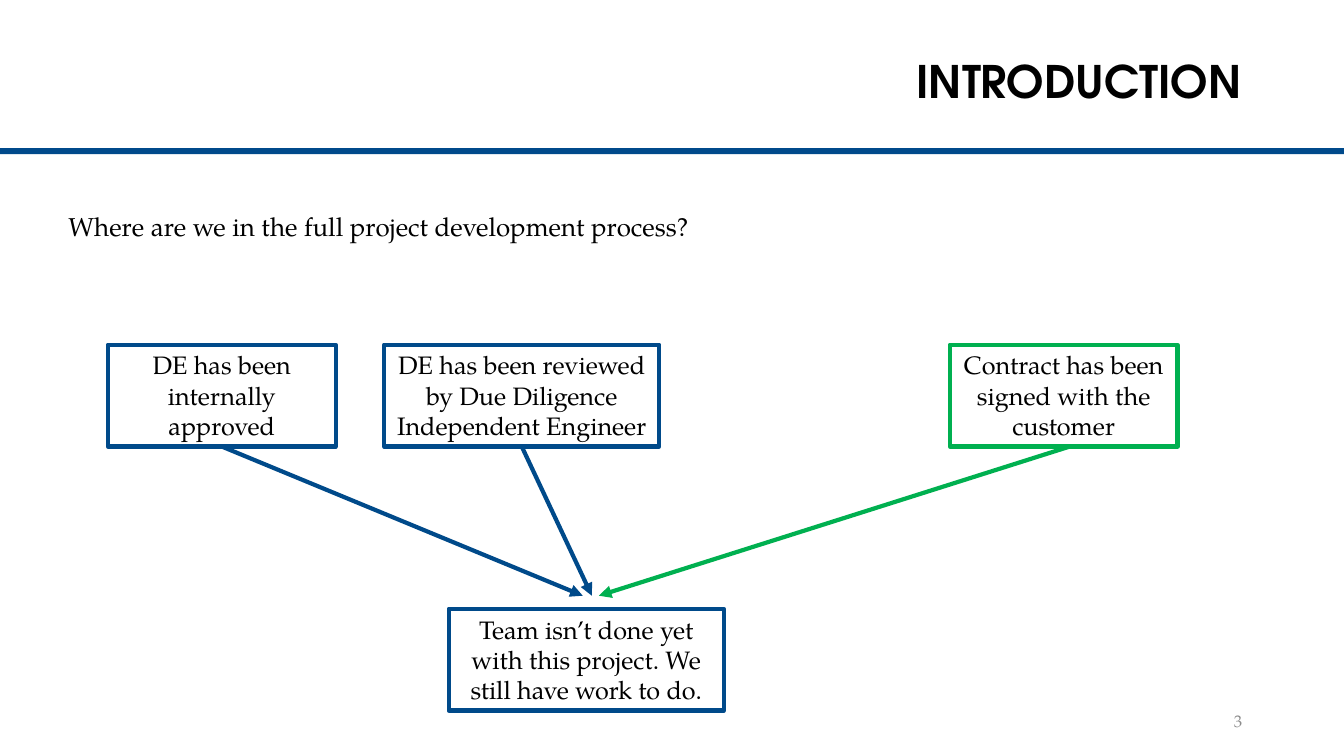
import pptx
import pptx.util
import pptx.dml.color
import pptx.enum.shapes
import pptx.enum.text
import pptx.oxml
import pptx.oxml.ns

PX = 9144  # 100 px to the inch
HEX = {"band": "004A8B", "blue": "004A8A", "green": "00B050",
       "white": "FFFFFF", "black": "000000", "gray": "8C8C8C"}
HEAD, BODY = "TeX Gyre Adventor", "TeX Gyre Pagella"
ALIGN = pptx.enum.text.PP_ALIGN
ANCHOR = pptx.enum.text.MSO_ANCHOR
RECT = pptx.enum.shapes.MSO_SHAPE.RECTANGLE
LINE = pptx.enum.shapes.MSO_CONNECTOR.STRAIGHT


def color(name):
    return pptx.dml.color.RGBColor.from_string(HEX[name])


def write(shape, text, size, align, face=BODY, ink="black", bold=False):
    frame = shape.text_frame
    frame.word_wrap = True
    frame.text = text
    par = frame.paragraphs[0]
    par.alignment = align
    font = par.runs[0].font
    font.name, font.size, font.bold = face, pptx.util.Pt(size), bold
    font.color.rgb = color(ink)
    return frame


deck = pptx.Presentation()
deck.slide_width, deck.slide_height = 1333 * PX, 750 * PX
slide = deck.slides.add_slide(deck.slide_layouts[5])
shapes = slide.shapes

# Band under the title
band = shapes.add_shape(RECT, 0, 147 * PX, 1333 * PX, 6 * PX)
band.shadow.inherit = False
band.fill.solid()
band.fill.fore_color.rgb = color("band")
band.line.fill.background()

# Title
title = shapes.title
title.left, title.top = 189 * PX, 40 * PX
title.width, title.height = 1053 * PX, 86 * PX
frame = write(title, "INTRODUCTION", 32, ALIGN.RIGHT, HEAD, bold=True)
frame.vertical_anchor = ANCHOR.MIDDLE
frame.paragraphs[0].line_spacing = 0.9

# Slide number
num = shapes.add_textbox(942 * PX, 695 * PX, 300 * PX, 40 * PX)
write(num, "3", 12, ALIGN.RIGHT, ink="gray").vertical_anchor = ANCHOR.MIDDLE

# Question
ask = shapes.add_textbox(58 * PX, 208 * PX, 682 * PX, 59 * PX)
frame = write(ask, "Where are we in the full project development process?",
              18.5, ALIGN.LEFT)
frame.paragraphs[0].line_spacing = 0.9

# Boxes: left, top, width, line colour, text
boxes = {}
for key, left, top, width, hue, text in [
    ("inner", 107, 342, 226, "blue", "DE has been internally approved"),
    ("review", 381, 342, 273, "blue",
     "DE has been reviewed by Due Diligence Independent Engineer"),
    ("signed", 942, 342, 226, "green",
     "Contract has been signed with the customer"),
    ("work", 445, 604, 273, "blue",
     "Team isn’t done yet with this project. We still have work to do."),
]:
    box = shapes.add_shape(RECT, left * PX, top * PX, width * PX, 101 * PX)
    box.shadow.inherit = False
    box.fill.solid()
    box.fill.fore_color.rgb = color("white")
    box.line.color.rgb = color(hue)
    box.line.width = pptx.util.Pt(3)
    write(box, text, 18, ALIGN.CENTER).vertical_anchor = ANCHOR.TOP
    boxes[key] = box

# Arrows: start x, end x, colour, box joined at its bottom middle
for start, end, hue, key in [(220, 578, "blue", "inner"),
                             (517, 587, "blue", "review"),
                             (1061, 594, "green", None)]:
    arrow = shapes.add_connector(LINE, start * PX, 443 * PX, end * PX, 591 * PX)
    if key:
        arrow.begin_connect(boxes[key], 2)
    arrow.line.color.rgb = color(hue)
    arrow.line.width = pptx.util.Pt(3)
    props = arrow.element.spPr
    tip = pptx.oxml.parse_xml(
        f'<a:tailEnd {pptx.oxml.ns.nsdecls("a")} type="triangle"/>')
    props.find(pptx.oxml.ns.qn("a:ln")).append(tip)
    props.append(pptx.oxml.parse_xml(
        f'<a:effectLst {pptx.oxml.ns.nsdecls("a")}/>'))

deck.save("out.pptx")
